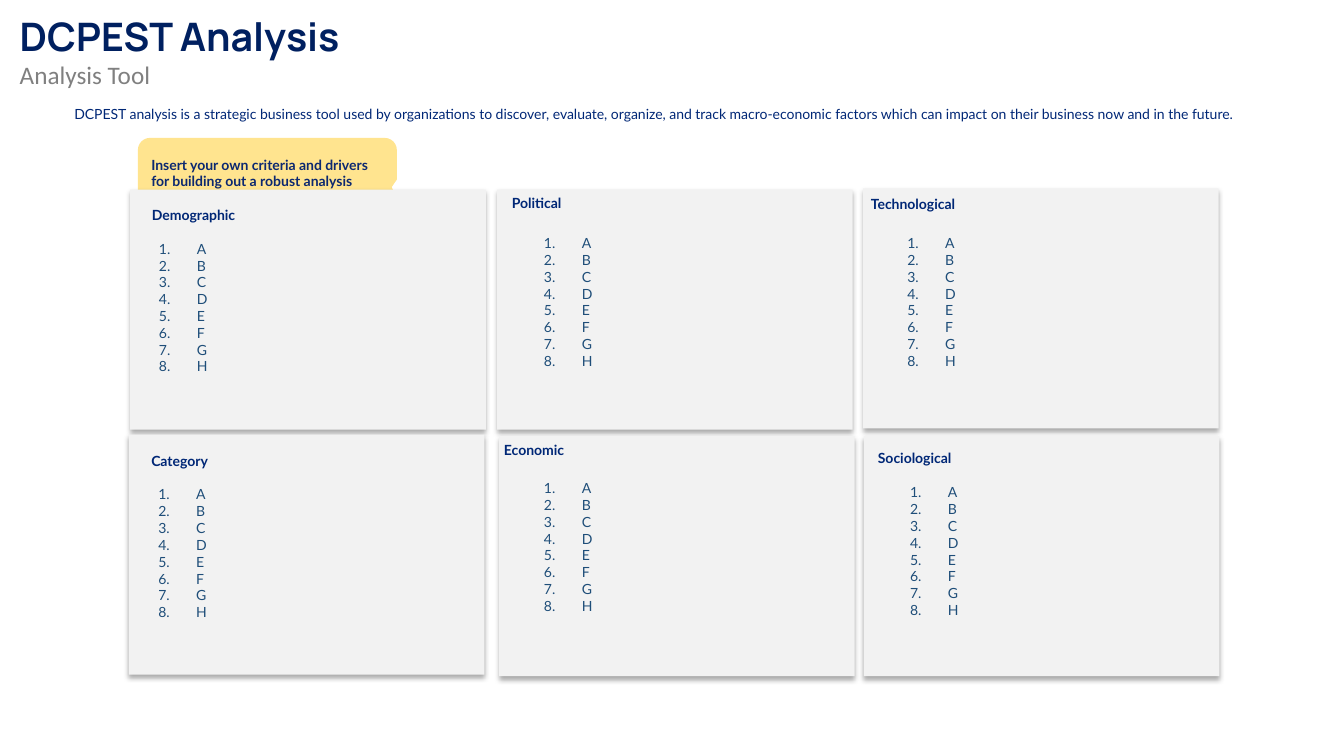
from dataclasses import dataclass

from lxml import etree
from pptx import Presentation
from pptx.dml.color import RGBColor
from pptx.enum.shapes import MSO_SHAPE
from pptx.enum.text import MSO_ANCHOR, MSO_AUTO_SIZE
from pptx.oxml.ns import qn
from pptx.util import Pt

RECTANGLE = MSO_SHAPE.RECTANGLE
CALLOUT = MSO_SHAPE.ROUNDED_RECTANGULAR_CALLOUT
TOP, MIDDLE = MSO_ANCHOR.TOP, MSO_ANCHOR.MIDDLE
GROW = MSO_AUTO_SIZE.SHAPE_TO_FIT_TEXT


@dataclass(frozen=True)
class Theme:
    title: str = "002060"
    subtitle: str = "808080"
    heading: str = "002776"
    item: str = "1F4E79"
    note: str = "0C2870"
    note_fill: str = "FFE48F"
    card_fill: str = "F2F2F2"
    shadow: str = "000000"
    title_font: str = "Manrope"
    subtitle_font: str = "Calibri"
    body_font: str = "Lato"
    title_size: float = 28
    subtitle_size: float = 18
    body_size: float = 10


THEME = Theme()

CARD_SIZE = (254, 171.5)
HEADING_SIZE = (127.5, 19.5)
LIST_SIZE = (199.5, 104.5)
LIST_INDENT = 27
CRITERIA = "ABCDEFGH"

# Heading, then top-left corners of the card, its heading and its list
RIGHT_PANELS = [
    ("Political", (355, 135.5), (358.5, 135.5), (381.5, 164)),
    ("Technological", (616.5, 134.5), (615, 136), (641, 164)),
    (" Economic", (356.5, 311.5), (350.5, 311.5), (381.5, 339)),
    ("Sociological", (617, 311.5), (620, 317.5), (643, 342)),
]
LEFT_PANELS = [
    ("Demographic", (93, 135.5), (101.5, 144), (106.5, 168)),
    ("Category", (92, 310.5), (101, 319.5), (106, 343.5)),
]


def write(para, text, color=THEME.heading, size=THEME.body_size,
          font=THEME.body_font, bold=False):
    span = para.add_run()
    span.text = text
    span.font.name = font
    span.font.size = Pt(size)
    span.font.bold = bold
    span.font.color.rgb = RGBColor.from_string(color)


def add_text_box(shapes, corner, size):
    box = shapes.add_textbox(*map(Pt, corner + size))
    box.text_frame.word_wrap = True
    box.text_frame.auto_size = GROW
    return box.text_frame


def add_filled_shape(shapes, kind, corner, size, fill):
    shape = shapes.add_shape(kind, *map(Pt, corner + size))
    shape.shadow.inherit = False
    shape.fill.solid()
    shape.fill.fore_color.rgb = RGBColor.from_string(fill)
    shape.line.fill.background()
    return shape


def add_shadow(shape):
    effects = shape._element.spPr.find(qn("a:effectLst"))
    shadow = etree.SubElement(effects, qn("a:outerShdw"), blurRad=str(Pt(3.5)),
                              dist=str(Pt(2.2)), dir="5400000", algn="t",
                              rotWithShape="0")
    color = etree.SubElement(shadow, qn("a:srgbClr"), val=THEME.shadow)
    etree.SubElement(color, qn("a:alpha"), val="32000")


def number_paragraph(para):
    properties = para._p.get_or_add_pPr()
    properties.set("marL", str(Pt(LIST_INDENT)))
    properties.set("indent", str(-Pt(LIST_INDENT)))
    properties.set("algn", "l")
    etree.SubElement(properties, qn("a:buFont"), typeface="+mj-lt")
    etree.SubElement(properties, qn("a:buAutoNum"), type="arabicPeriod")


def add_numbered_list(shapes, corner, items):
    box = add_filled_shape(shapes, RECTANGLE, corner, LIST_SIZE, THEME.card_fill)
    frame = box.text_frame
    frame.word_wrap = True
    frame.auto_size = GROW
    frame.vertical_anchor = TOP
    for index, item in enumerate(items):
        para = frame.add_paragraph() if index else frame.paragraphs[0]
        number_paragraph(para)
        write(para, item, color=THEME.item)


def add_panel(shapes, heading, card_corner, heading_corner, list_corner):
    card = add_filled_shape(shapes, RECTANGLE, card_corner, CARD_SIZE,
                            THEME.card_fill)
    add_shadow(card)
    frame = add_text_box(shapes, heading_corner, HEADING_SIZE)
    write(frame.paragraphs[0], heading, bold=True)
    add_numbered_list(shapes, list_corner, CRITERIA)


def add_note(shapes, text):
    note = add_filled_shape(shapes, CALLOUT, (98.5, 98.5), (185, 51),
                            THEME.note_fill)
    for index, value in enumerate((0.48, 0.19, 0.17)):
        note.adjustments[index] = value
    frame = note.text_frame
    frame.word_wrap = True
    frame.vertical_anchor = MIDDLE
    para = frame.paragraphs[0]
    para._p.get_or_add_pPr().set("algn", "l")
    para.line_spacing = Pt(11)
    write(para, text, color=THEME.note, bold=True)


def add_title(shapes, title, subtitle):
    frame = add_text_box(shapes, (7, 5), (353, 63.5))
    write(frame.paragraphs[0], title, color=THEME.title, size=THEME.title_size,
          font=THEME.title_font, bold=True)
    write(frame.add_paragraph(), subtitle, color=THEME.subtitle,
          size=THEME.subtitle_size, font=THEME.subtitle_font)


def main():
    deck = Presentation()
    deck.slide_width, deck.slide_height = Pt(960), Pt(540)
    page = deck.slides.add_slide(deck.slide_layouts[6])

    # Introduction
    intro = add_text_box(page.shapes, (46, 72), (862.5, 19.5))
    write(intro.paragraphs[0],
          "DCPEST analysis is a strategic business tool used by organizations "
          "to discover, evaluate, organize, and track macro-economic factors "
          "which can impact on their business now and in the future.")

    # Panels; the left column overlaps the foot of the note
    for panel in RIGHT_PANELS:
        add_panel(page.shapes, *panel)
    add_note(page.shapes, "Insert your own criteria and drivers for building "
                          "out a robust analysis")
    for panel in LEFT_PANELS:
        add_panel(page.shapes.add_group_shape().shapes, *panel)

    # Title
    add_title(page.shapes, "DCPEST Analysis", "Analysis Tool")

    deck.save("out.pptx")


if __name__ == "__main__":
    main()
